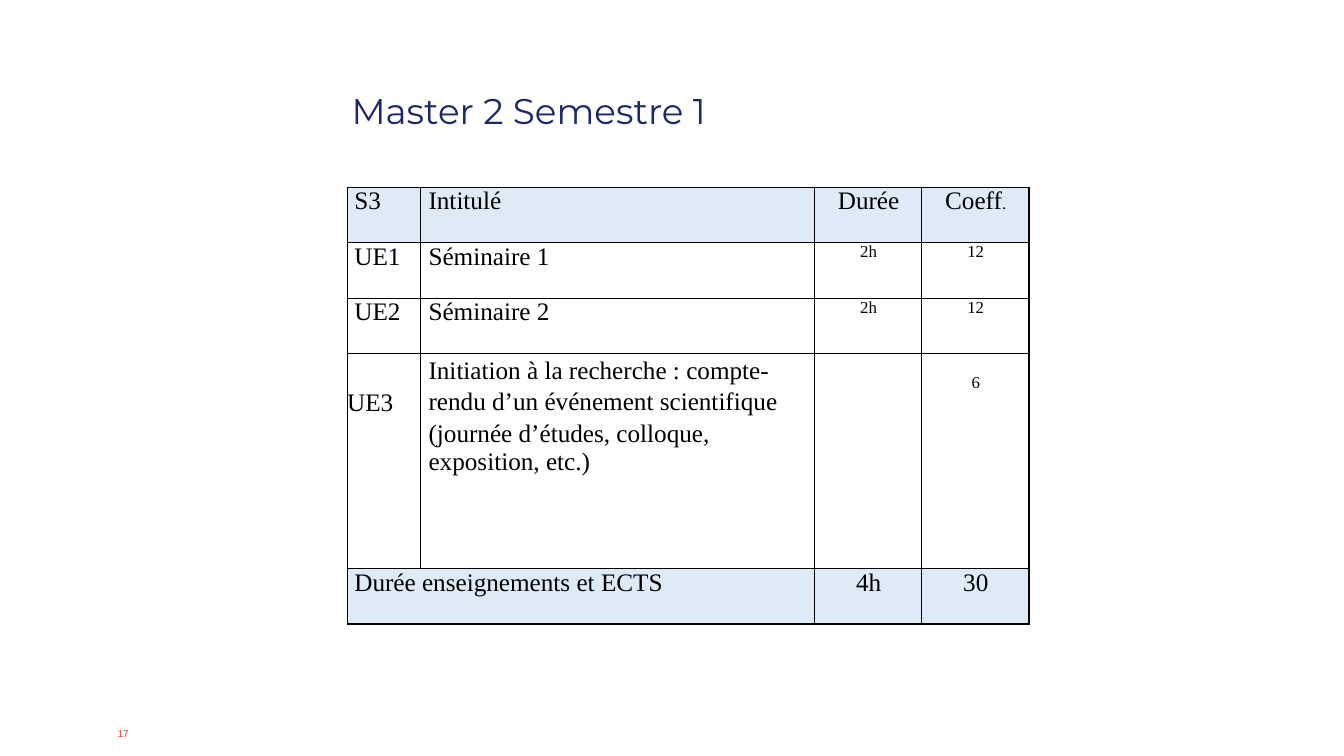
from lxml import etree
from pptx import Presentation
from pptx import util as u
from pptx.dml import color
from pptx.enum import text
from pptx.oxml import ns

COLORS = {"title": "1D2769", "number": "E6332A", "text": "000000",
          "border": "000000", "band": "DEEAF6"}
SERIF = "Times New Roman"


def add_run(paragraph, words, size, font, color_name):
    run = paragraph.add_run()
    run.text = words
    run.font.size = u.Pt(size)
    run.font.name = font
    run.font.color.rgb = color.RGBColor.from_string(COLORS[color_name])


def add_borders(cell):
    properties = cell._tc.get_or_add_tcPr()
    for side in ("lnL", "lnR", "lnT", "lnB"):
        line = etree.SubElement(properties, ns.qn(f"a:{side}"), w=str(u.Pt(1)))
        fill = etree.SubElement(line, ns.qn("a:solidFill"))
        etree.SubElement(fill, ns.qn("a:srgbClr"), val=COLORS["border"])


presentation = Presentation()
presentation.slide_width = u.Cm(33.87)
presentation.slide_height = u.Cm(19.05)
slide = presentation.slides.add_slide(presentation.slide_layouts[6])

# Slide number and title: left, top, width, height, wrap, words, size, font, color
labels = [
    (2.87, 18.34, 0.64, 0.3, False, "17", 7, "Arial", "number"),
    (8.76, 1.32, 16.36, 2.01, True, "Master 2 Semestre 1", 25.5, "Montserrat", "title"),
]
for left, top, width, height, wrap, words, size, font, color_name in labels:
    box = slide.shapes.add_textbox(u.Cm(left), u.Cm(top), u.Cm(width), u.Cm(height))
    frame = box.text_frame
    frame.word_wrap = wrap
    frame.vertical_anchor = text.MSO_ANCHOR.BOTTOM
    frame.margin_left = frame.margin_right = u.Cm(0.1)
    frame.margin_top = frame.margin_bottom = 0
    paragraph = frame.paragraphs[0]
    paragraph.line_spacing = 0.9
    add_run(paragraph, words, size, font, color_name)

# Course table: each cell holds paragraphs, each paragraph holds (words, size) runs
rows = [
    [[[("S3", 18)]], [[("Intitulé", 18)]], [[("Durée", 18)]], [[("Coeff", 18), (".", 12)]]],
    [[[("UE1", 18)]], [[("Séminaire 1", 18)]], [[("2h", 12)]], [[("12", 12)]]],
    [[[("UE2", 18)]], [[("Séminaire 2", 18)]], [[("2h", 12)]], [[("12", 12)]]],
    [[[("UE3", 18)]],
     [[("Initiation à la recherche : compte-rendu d’un événement scientifique "
        "(journée d’études, colloque,", 18)], [("exposition, etc.)", 18)]],
     [], [[("6", 12)]]],
    [[[("Durée enseignements et ECTS", 18)]], [], [[("4h", 18)]], [[("30", 18)]]],
]
column_widths = [1.85, 9.93, 2.7, 2.7]
row_heights = [1.4, 1.4, 1.4, 5.41, 1.4]
left_margins = [0.18, 0.2, 0.02, 0.02]
SEMINAR_REPORT = 3
report_top_margins = [0.88, 0, 0, 0.49]

table = slide.shapes.add_table(
    len(rows), len(column_widths), u.Cm(8.75), u.Cm(4.72),
    u.Cm(sum(column_widths)), u.Cm(sum(row_heights))).table
table.first_row = table.horz_banding = False
for column, width in zip(table.columns, column_widths):
    column.width = u.Cm(width)
for row, height in zip(table.rows, row_heights):
    row.height = u.Cm(height)

for r, row in enumerate(rows):
    for c, paragraphs in enumerate(row):
        cell = table.cell(r, c)
        is_report = r == SEMINAR_REPORT
        cell.margin_left = u.Cm(0 if is_report and c == 0 else left_margins[c])
        cell.margin_top = u.Cm(report_top_margins[c] if is_report else 0)
        cell.margin_right = cell.margin_bottom = 0
        add_borders(cell)
        if r in (0, len(rows) - 1):
            cell.fill.solid()
            cell.fill.fore_color.rgb = color.RGBColor.from_string(COLORS["band"])
        else:
            cell.fill.background()
        for i, runs in enumerate(paragraphs):
            frame = cell.text_frame
            paragraph = frame.add_paragraph() if i else frame.paragraphs[0]
            paragraph.alignment = text.PP_ALIGN.CENTER if c > 1 else text.PP_ALIGN.LEFT
            if len(paragraphs) > 1 and i == 0:
                paragraph.line_spacing = 1.12
            for words, size in runs:
                add_run(paragraph, words, size, SERIF, "text")

# The total label spans the first two columns
table.cell(len(rows) - 1, 0).merge(table.cell(len(rows) - 1, 1))

presentation.save("out.pptx")
